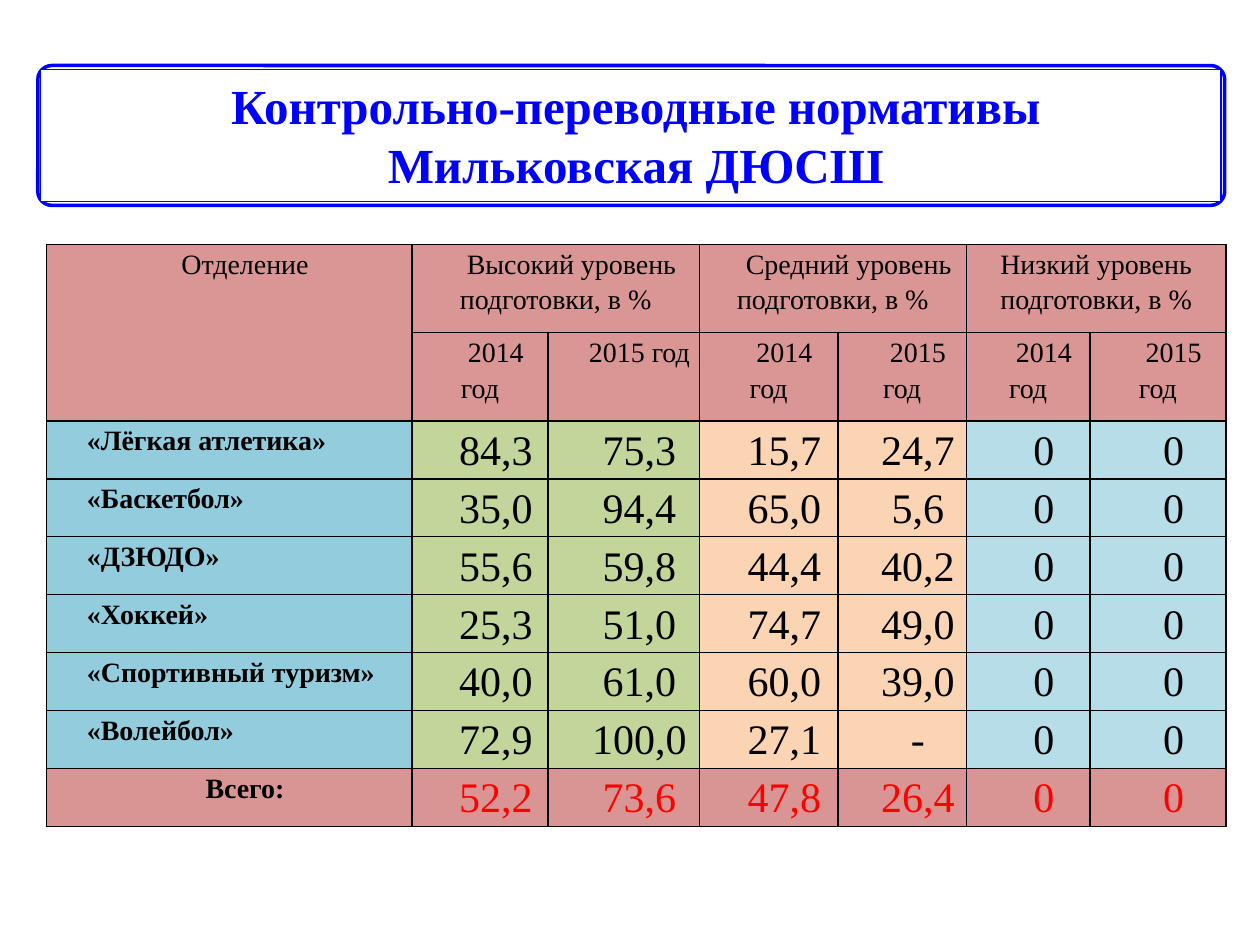
"""Build the slide of control standards for the sports school."""
from dataclasses import dataclass

from lxml import etree
from pptx import Presentation
from pptx.dml.color import RGBColor
from pptx.enum.shapes import MSO_SHAPE
from pptx.enum.text import MSO_ANCHOR, MSO_AUTO_SIZE, PP_ALIGN
from pptx.oxml.ns import qn
from pptx.util import Inches, Pt

CENTER, JUSTIFY = PP_ALIGN.CENTER, PP_ALIGN.JUSTIFY
TOP, FIXED = MSO_ANCHOR.TOP, MSO_AUTO_SIZE.NONE
ROUND, RECT = MSO_SHAPE.ROUNDED_RECTANGLE, MSO_SHAPE.RECTANGLE
FONT = "Times New Roman"
BLUE, WHITE, BLACK, RED = "0000FF", "FFFFFF", "000000", "FF0000"
ROSE, SKY, PINK = "D99694", "93CDDD", "D99594"
BANDS = ["C2D69B", "FBD4B4", "B6DDE8"]

WIDE, HIGH = Inches(10), Inches(7.5)
COLS, ROWS = 100, 75
TITLE = ["Контрольно-переводные нормативы", "Мильковская ДЮСШ"]
LEVELS = ["Высокий", "Средний", "Низкий"]
YEARS = ["2014 год", "2015 год"]
SCORES = [
    ("«Лёгкая атлетика»", "84,3", "75,3", "15,7", "24,7", "0", "0"),
    ("«Баскетбол»", "35,0", "94,4", "65,0", "5,6", "0", "0"),
    ("«ДЗЮДО»", "55,6", "59,8", "44,4", "40,2", "0", "0"),
    ("«Хоккей»", "25,3", "51,0", "74,7", "49,0", "0", "0"),
    ("«Спортивный туризм»", "40,0", "61,0", "60,0", "39,0", "0", "0"),
    ("«Волейбол»", "72,9", "100,0", "27,1", "-", "0", "0"),
    ("Всего:", "52,2", "73,6", "47,8", "26,4", "0", "0"),
]
SPANS = [29, 10.8, 12, 11, 10.2, 9.8, 10.8]
DEPTHS = [7, 7] + [4.6] * len(SCORES)


@dataclass
class Box:
    """A place on the slide grid."""
    x: float
    y: float
    w: float
    h: float

    def emu(self) -> tuple:
        """Return left, top, width and height as lengths."""
        return across(self.x), down(self.y), across(self.w), down(self.h)


@dataclass
class Frame:
    """A white panel behind the title."""
    kind: int
    box: Box
    line: float


@dataclass
class Style:
    """The look of a table cell."""
    fill: str
    size: float = 16
    color: str = BLACK
    bold: bool = False
    align: int = CENTER
    indent: float = 2.5


FRAMES = [
    Frame(ROUND, Box(3, 5.2, 94.2, 11.1), 2),
    Frame(RECT, Box(3.2, 5.5, 93.7, 10.5), 0.75),
]


def across(cols: float) -> int:
    """Turn grid columns into a length."""
    return int(WIDE * cols / COLS)


def down(rows: float) -> int:
    """Turn grid rows into a length."""
    return int(HIGH * rows / ROWS)


def rgb(code: str) -> RGBColor:
    """Turn a hex string into a colour."""
    return RGBColor.from_string(code)


def write(para, text: str, size: float, color: str, bold: bool) -> None:
    """Add one run to a paragraph."""
    run = para.add_run()
    run.text = text
    font = run.font
    font.name, font.size, font.bold = FONT, Pt(size), bold
    font.color.rgb = rgb(color)


def panel(slide, frame: Frame) -> None:
    """Draw one title panel."""
    shape = slide.shapes.add_shape(frame.kind, *frame.box.emu())
    if frame.kind == ROUND:
        shape.adjustments[0] = 0.1
    shape.shadow.inherit = False
    shape.fill.solid()
    shape.fill.fore_color.rgb = rgb(WHITE)
    shape.line.color.rgb = rgb(BLUE)
    shape.line.width = Pt(frame.line)


def head(slide) -> None:
    """Place the title above its panels."""
    title = slide.shapes.title
    title.left, title.top, title.width, title.height = Box(6.1, 5.5, 88.7, 15.1).emu()
    slide.shapes._spTree.append(title._element)
    frame = title.text_frame
    frame.word_wrap, frame.auto_size = True, FIXED
    frame.vertical_anchor = TOP
    for row, text in enumerate(TITLE):
        para = frame.add_paragraph() if row else frame.paragraphs[0]
        para.alignment = CENTER
        write(para, text, 28, BLUE, True)


def border(cell) -> None:
    """Rule all four sides of a cell."""
    props = cell._tc.get_or_add_tcPr()
    for side in ("lnL", "lnR", "lnT", "lnB"):
        line = etree.SubElement(props, qn(f"a:{side}"), w=str(Pt(1)))
        fill = etree.SubElement(line, qn("a:solidFill"))
        etree.SubElement(fill, qn("a:srgbClr"), val=BLACK)


def put(cell, text: str, style: Style) -> None:
    """Fill one cell with styled text."""
    cell.margin_left = cell.margin_right = Inches(0.07)
    cell.margin_top = cell.margin_bottom = 0
    cell.fill.solid()
    cell.fill.fore_color.rgb = rgb(style.fill)
    para = cell.text_frame.paragraphs[0]
    para.alignment, para.line_spacing = style.align, 1.15
    para._p.get_or_add_pPr().set("indent", str(across(style.indent)))
    write(para, text, style.size, style.color, style.bold)


def top(table) -> None:
    """Write the two header rows."""
    corner = table.cell(0, 0)
    corner.merge(table.cell(1, 0))
    put(corner, "Отделение", Style(ROSE))
    for pos, level in enumerate(LEVELS):
        col = 1 + pos * len(YEARS)
        cell = table.cell(0, col)
        cell.merge(table.cell(0, col + 1))
        indent = 0 if level == LEVELS[-1] else 2.5
        put(cell, f"{level} уровень подготовки, в %", Style(ROSE, indent=indent))
        for step, year in enumerate(YEARS):
            put(table.cell(1, col + step), year, Style(ROSE))


def body(table) -> None:
    """Write the scores and the total row."""
    for row, (name, *marks) in enumerate(SCORES, 2):
        total = row == len(SCORES) + 1
        label = Style(PINK, bold=True) if total else Style(SKY, bold=True, align=JUSTIFY)
        put(table.cell(row, 0), name, label)
        for col, mark in enumerate(marks):
            fill = PINK if total else BANDS[col // len(YEARS)]
            color = RED if total else BLACK
            put(table.cell(row, col + 1), mark, Style(fill, 24, color))


def grid(slide) -> None:
    """Add the table of scores."""
    box = Box(3.7, 19.4, sum(SPANS), sum(DEPTHS))
    table = slide.shapes.add_table(len(DEPTHS), len(SPANS), *box.emu()).table
    table.first_row = table.horz_banding = False
    for col, span in zip(table.columns, SPANS):
        col.width = across(span)
    for row, depth in zip(table.rows, DEPTHS):
        row.height = down(depth)
    for cell in table.iter_cells():
        border(cell)
    top(table)
    body(table)


def main() -> None:
    """Build and save the deck."""
    deck = Presentation()
    deck.slide_width, deck.slide_height = WIDE, HIGH
    slide = deck.slides.add_slide(deck.slide_layouts[5])
    for frame in FRAMES:
        panel(slide, frame)
    head(slide)
    grid(slide)
    deck.save("out.pptx")


if __name__ == "__main__":
    main()
